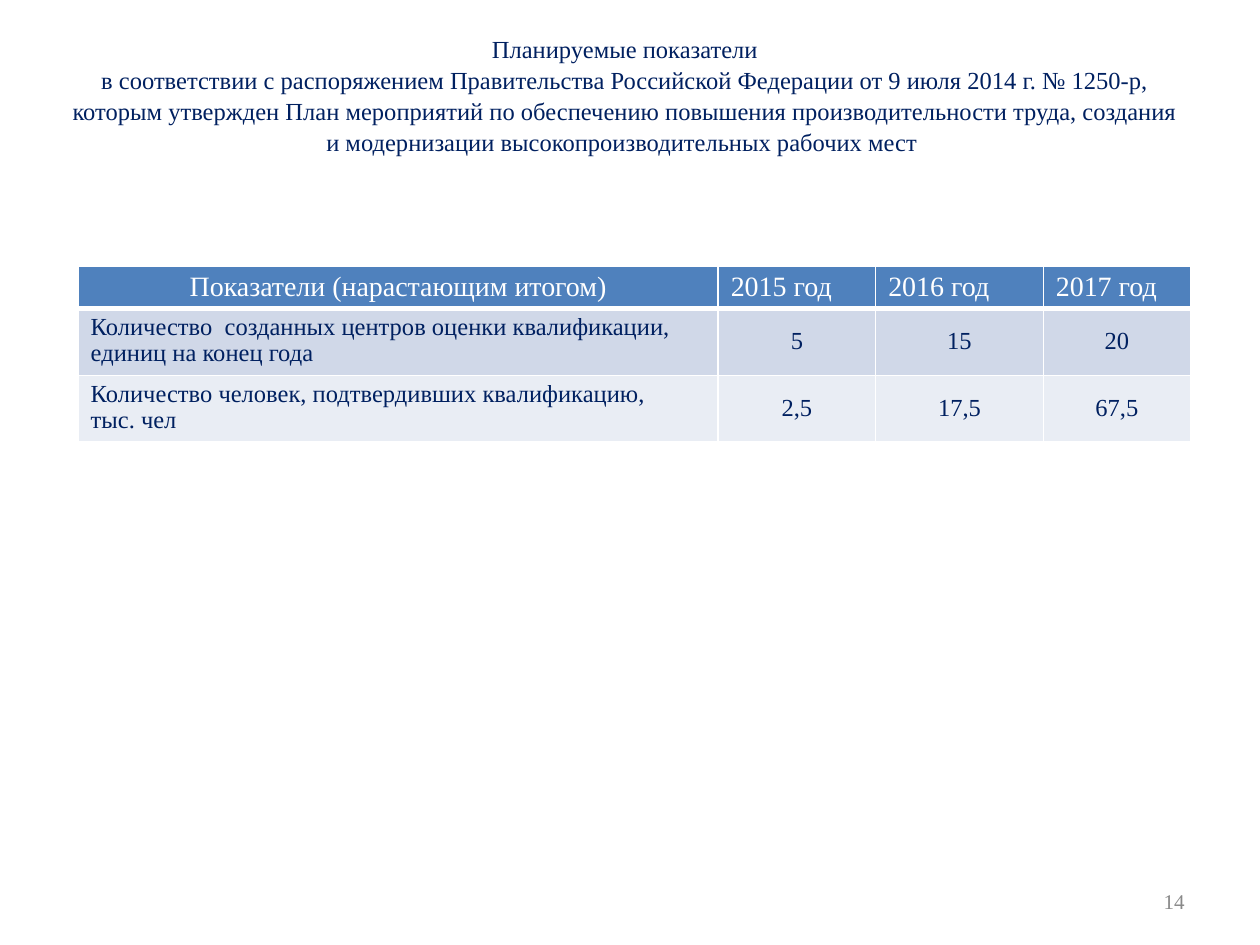
from dataclasses import dataclass

from lxml import etree
from pptx import Presentation
from pptx.dml.color import RGBColor
from pptx.enum.text import MSO_ANCHOR, MSO_AUTO_SIZE, PP_ALIGN
from pptx.oxml.ns import qn
from pptx.util import Inches, Pt

LEFT, CENTER, RIGHT = PP_ALIGN.LEFT, PP_ALIGN.CENTER, PP_ALIGN.RIGHT
TOP, MIDDLE = MSO_ANCHOR.TOP, MSO_ANCHOR.MIDDLE
FIXED_SIZE = MSO_AUTO_SIZE.NONE
TITLE_ONLY = 5


@dataclass(frozen=True)
class Theme:
    font: str = "Times New Roman"
    navy: str = "002060"
    white: str = "FFFFFF"
    gray: str = "898989"
    header_fill: str = "4F81BD"
    band_fills: tuple = ("D0D8E8", "E9EDF4")
    header_size: int = 16
    body_size: int = 14
    number_size: int = 12
    title_spacing: float = 1.05
    cell_spacing: float = 0.96
    thin: int = 1
    thick: int = 3


TITLE = [
    "Планируемые показатели",
    "в соответствии с распоряжением Правительства Российской Федерации "
    "от 9 июля 2014 г. № 1250-р, которым утвержден План мероприятий по "
    "обеспечению повышения производительности труда, создания "
    "и модернизации высокопроизводительных рабочих мест ",
]
HEADERS = ["Показатели (нарастающим итогом)", "2015 год", "2016 год", "2017 год"]
INDICATORS = [
    (["Количество  созданных центров оценки квалификации, единиц на конец года"],
     ["5", "15", "20"]),
    (["Количество человек, подтвердивших квалификацию,", "тыс. чел"],
     ["2,5", "17,5", "67,5"]),
]
COLUMN_WIDTHS = [5.08, 1.25, 1.33, 1.17]
ROW_HEIGHTS = [0.34, 0.53, 0.53]


class SlideBuilder:
    def __init__(self, page, theme):
        self.page = page
        self.theme = theme

    def add_lines(self, frame, lines, size, color, align=LEFT, spacing=1.0):
        for index, line in enumerate(lines):
            para = frame.paragraphs[0] if index == 0 else frame.add_paragraph()
            para.alignment = align
            para.line_spacing = spacing
            para.space_before = Pt(0)
            span = para.add_run()
            span.text = line
            span.font.name = self.theme.font
            span.font.size = Pt(size)
            span.font.color.rgb = RGBColor.from_string(color)

    def place(self, box, left, top, width, height):
        box.left, box.top = Inches(left), Inches(top)
        box.width, box.height = Inches(width), Inches(height)
        frame = box.text_frame
        frame.word_wrap = True
        frame.auto_size = FIXED_SIZE
        frame.vertical_anchor = MIDDLE
        return frame

    def title(self, lines, *bounds):
        frame = self.place(self.page.shapes.title, *bounds)
        self.add_lines(frame, lines, self.theme.body_size, self.theme.navy,
                       CENTER, self.theme.title_spacing)

    def page_number(self, number, *bounds):
        box = self.page.shapes.add_textbox(0, 0, 0, 0)
        frame = self.place(box, *bounds)
        self.add_lines(frame, [number], self.theme.number_size, self.theme.gray,
                       RIGHT)

    def borders(self, cell, top, bottom):
        """Draw all four cell edges; they must precede the fill in the XML."""
        properties = cell._tc.get_or_add_tcPr()
        thin = self.theme.thin
        edges = [("a:lnL", thin), ("a:lnR", thin), ("a:lnT", top), ("a:lnB", bottom)]
        for position, (tag, width) in enumerate(edges):
            line = etree.Element(qn(tag), w=str(Pt(width)))
            fill = etree.SubElement(line, qn("a:solidFill"))
            etree.SubElement(fill, qn("a:srgbClr"), val=self.theme.white)
            properties.insert(position, line)

    def cell(self, cell, lines, size, color, fill, align, anchor, top, bottom):
        cell.fill.solid()
        cell.fill.fore_color.rgb = RGBColor.from_string(fill)
        cell.vertical_anchor = anchor
        self.borders(cell, top, bottom)
        self.add_lines(cell.text_frame, lines, size, color, align,
                       self.theme.cell_spacing)

    def table(self, headers, indicators, left, top):
        theme = self.theme
        table = self.page.shapes.add_table(
            len(ROW_HEIGHTS), len(COLUMN_WIDTHS), Inches(left), Inches(top),
            Inches(sum(COLUMN_WIDTHS)), Inches(sum(ROW_HEIGHTS))).table
        table.horz_banding = False
        for column, width in zip(table.columns, COLUMN_WIDTHS):
            column.width = Inches(width)
        for row, height in zip(table.rows, ROW_HEIGHTS):
            row.height = Inches(height)

        for index, header in enumerate(headers):
            self.cell(table.cell(0, index), [header], theme.header_size,
                      theme.white, theme.header_fill, LEFT if index else CENTER,
                      TOP, theme.thin, theme.thick)
        for row, (label, values) in enumerate(indicators, start=1):
            fill = theme.band_fills[row - 1]
            upper = theme.thick if row == 1 else theme.thin
            for index, lines in enumerate([label] + [[value] for value in values]):
                align, anchor = (CENTER, MIDDLE) if index else (LEFT, TOP)
                self.cell(table.cell(row, index), lines, theme.body_size,
                          theme.navy, fill, align, anchor, upper, theme.thin)


def main():
    deck = Presentation()
    deck.slide_width, deck.slide_height = Inches(10), Inches(7.5)
    page = deck.slides.add_slide(deck.slide_layouts[TITLE_ONLY])
    builder = SlideBuilder(page, Theme())
    builder.title(TITLE, 0.47, 0.23, 8.98, 1.04)
    builder.table(HEADERS, INDICATORS, 0.62, 2.11)
    builder.page_number("14", 7.17, 6.95, 2.33, 0.4)
    deck.save("out.pptx")


if __name__ == "__main__":
    main()
